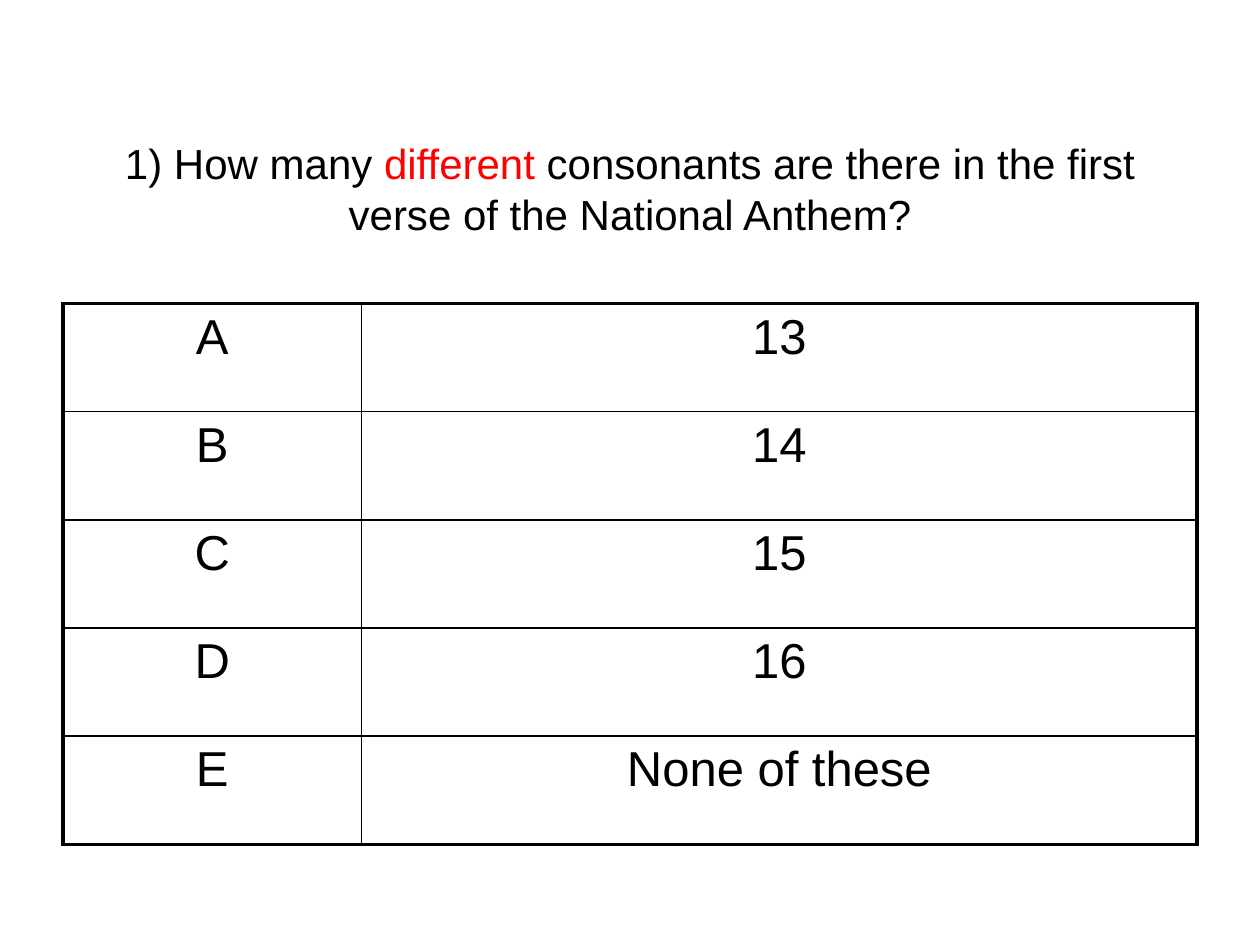
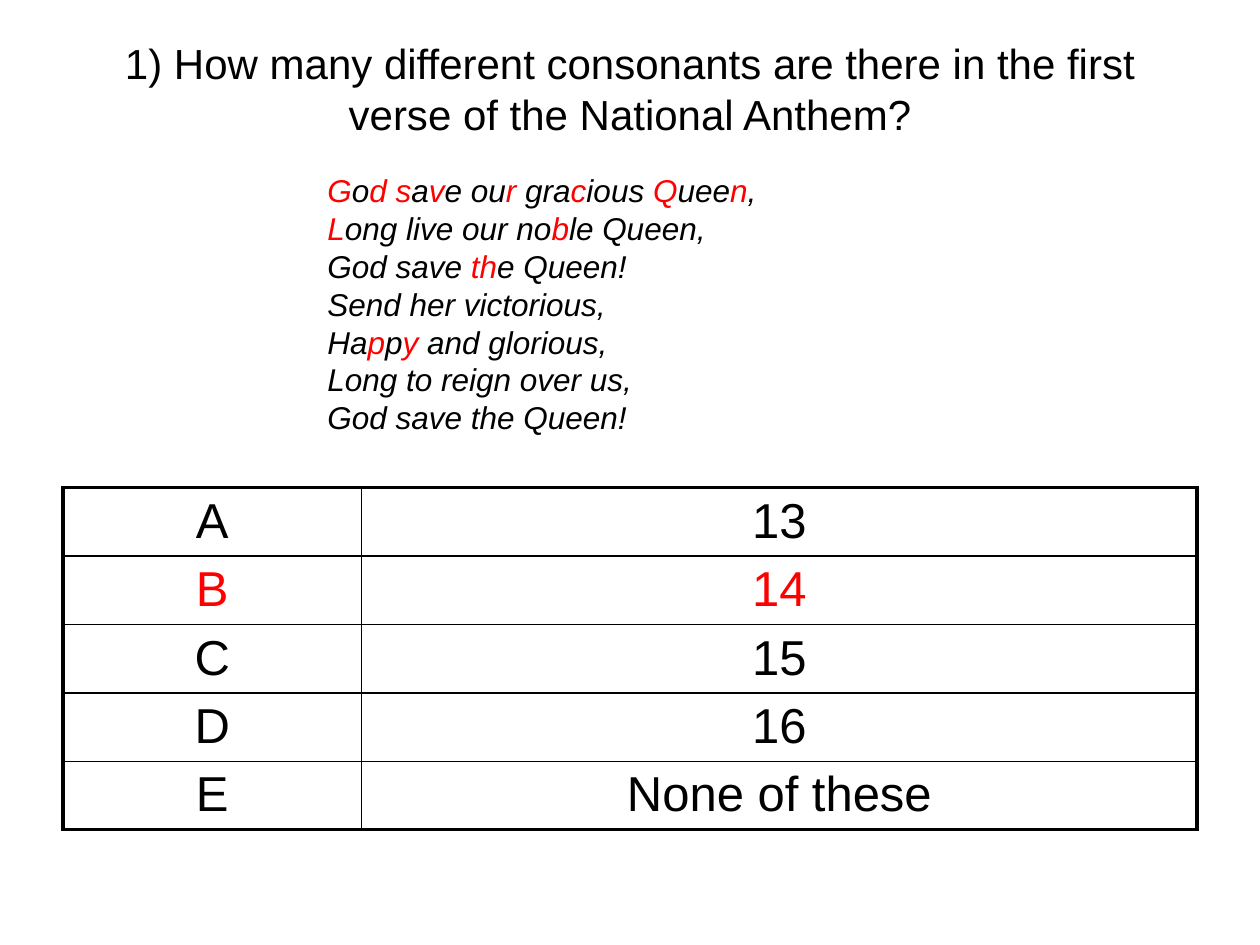
"""Build a quiz question slide and its answer slide."""
from lxml.etree import SubElement
from pptx import Presentation
from pptx.dml.color import RGBColor
from pptx.enum.text import MSO_ANCHOR, MSO_AUTO_SIZE, PP_ALIGN
from pptx.oxml.ns import qn
from pptx.util import Cm, Pt

HUES = {"ink": "000000", "mark": "FF0000"}
FONT = "Arial"
THICK, THIN = Pt(2.25), Pt(1)
LEFT, WIDE = Cm(1.27), Cm(22.86)
COLS = [Cm(6.02), Cm(16.84)]

VERSE = [
    "|G|o|d s|a|v|e ou|r| gra|c|ious |Q|uee|n|,",
    "|L|ong live our no|b|le Queen,",
    "God save |th|e Queen!",
    "Send her victorious,",
    "Ha|p|p|y| and glorious,",
    "Long to reign over us,",
    "God save the Queen!",
]

PAGES = [
    {
        "title": "1) How many |different| consonants are there in the first verse of the National Anthem?",
        "head": 2.19, "top": 6.12, "row": 2.18, "verse": [],
        "picks": [("A", "13"), ("B", "14"), ("C", "15"), ("D", "16"), ("E", "None of these")],
    },
    {
        "title": "1) How many different consonants are there in the first verse of the National Anthem?",
        "head": 0.18, "top": 9.83, "row": 1.38, "verse": VERSE,
        "picks": [("A", "13"), ("|B|", "|14|"), ("C", "15"), ("D", "16"), ("E", "None of these")],
    },
]


def write(para, text, size, slant=False):
    for n, part in enumerate(text.split("|")):
        if part:
            run = para.add_run()
            run.text = part
            run.font.name = FONT
            run.font.size = Pt(size)
            run.font.italic = slant
            run.font.color.rgb = RGBColor.from_string(HUES["mark" if n % 2 else "ink"])


def rule(cell, sides):
    props = cell._tc.get_or_add_tcPr()
    for n, (side, width) in enumerate(sides.items()):
        line = SubElement(props, qn(f"a:ln{side}"), w=str(width))
        fill = SubElement(line, qn("a:solidFill"))
        SubElement(fill, qn("a:srgbClr"), val=HUES["ink"])
        props.insert(n, line)


deck = Presentation()
deck.slide_width, deck.slide_height = Cm(25.4), Cm(19.05)

for page in PAGES:
    slide = deck.slides.add_slide(deck.slide_layouts[5])

    title = slide.shapes.title
    title.left, title.top = LEFT, Cm(page["head"])
    title.width, title.height = WIDE, Cm(3.2)
    frame = title.text_frame
    frame.auto_size = MSO_AUTO_SIZE.NONE
    frame.vertical_anchor = MSO_ANCHOR.MIDDLE
    frame.paragraphs[0].alignment = PP_ALIGN.CENTER
    write(frame.paragraphs[0], page["title"], 24)

    picks = page["picks"]
    last = len(picks) - 1
    high = Cm(page["row"])
    grid = slide.shapes.add_table(len(picks), 2, LEFT, Cm(page["top"]), WIDE, high * len(picks)).table
    grid.first_row = grid.horz_banding = False
    for col, width in zip(grid.columns, COLS):
        col.width = width
    for r, pick in enumerate(picks):
        grid.rows[r].height = high
        for c, text in enumerate(pick):
            cell = grid.cell(r, c)
            cell.fill.background()
            rule(cell, {
                "L": THICK if c == 0 else THIN,
                "R": THICK if c == 1 else THIN,
                "T": THICK if r == 0 else THIN,
                "B": THICK if r == last else THIN,
            })
            para = cell.text_frame.paragraphs[0]
            para.alignment = PP_ALIGN.CENTER
            write(para, text, 28)

    if page["verse"]:
        box = slide.shapes.add_textbox(Cm(6.35), Cm(3.33), Cm(14.35), Cm(5.64))
        box.text_frame.word_wrap = True
        para = box.text_frame.paragraphs[0]
        for n, line in enumerate(page["verse"]):
            if n:
                para.add_line_break()
            write(para, line, 18, True)

deck.save("out.pptx")
